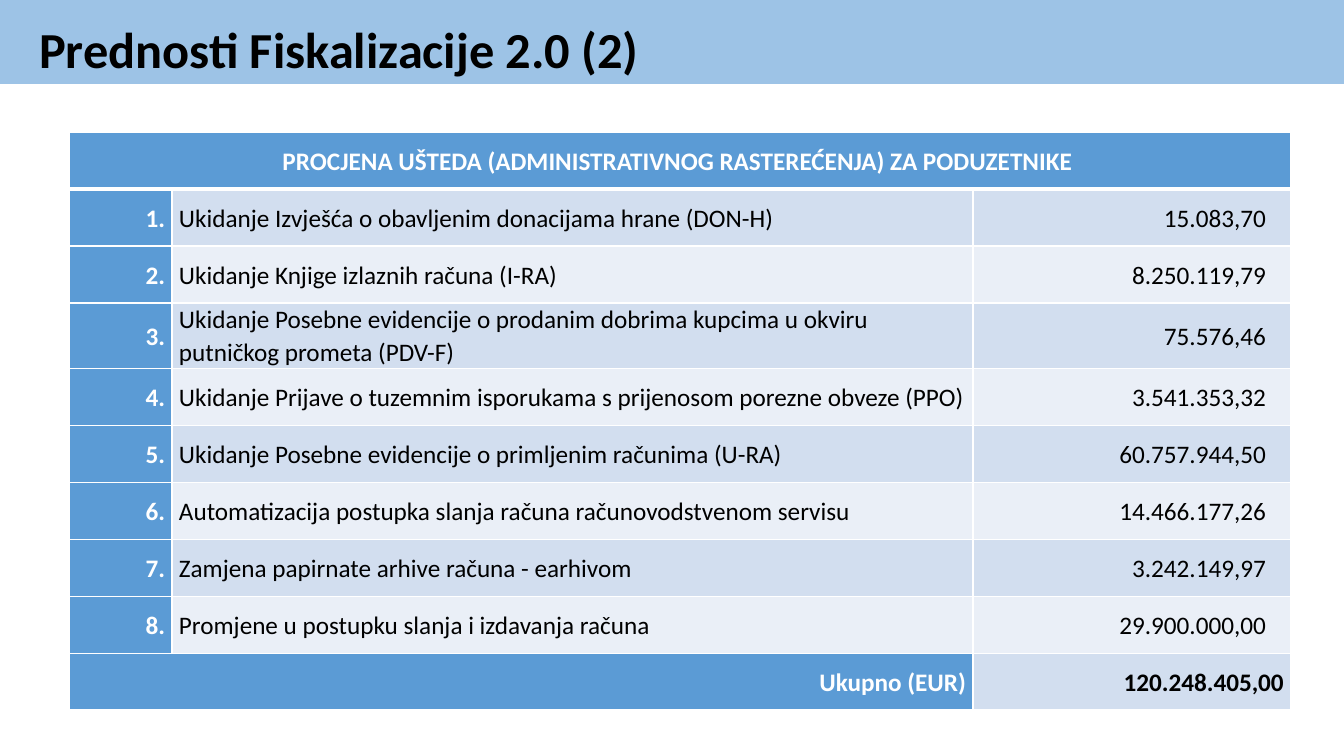
from lxml import etree
from pptx import Presentation
from pptx.dml.color import RGBColor
from pptx.enum.text import MSO_ANCHOR, MSO_AUTO_SIZE, PP_ALIGN
from pptx.oxml.ns import qn
from pptx.util import Pt

PAGE_WIDTH, PAGE_HEIGHT = 1344, 756
PX = 12192000 / PAGE_WIDTH
LEFT, CENTER, RIGHT = PP_ALIGN.LEFT, PP_ALIGN.CENTER, PP_ALIGN.RIGHT
MIDDLE, BOTTOM = MSO_ANCHOR.MIDDLE, MSO_ANCHOR.BOTTOM
NO_AUTOFIT = MSO_AUTO_SIZE.NONE

FONT = "Calibri"
BLACK, WHITE = "000000", "FFFFFF"
BANNER, ACCENT = "9DC3E6", "5B9BD5"
BANDS = ("D2DEEF", "EAEFF7")

TITLE = "Prednosti Fiskalizacije 2.0 (2)"
TABLE_HEADING = "PROCJENA UŠTEDA (ADMINISTRATIVNOG RASTEREĆENJA) ZA PODUZETNIKE"
SAVINGS = (
    ("Ukidanje Izvješća o obavljenim donacijama hrane (DON-H)", "15.083,70"),
    ("Ukidanje Knjige izlaznih računa (I-RA)", "8.250.119,79"),
    ("Ukidanje Posebne evidencije o prodanim dobrima kupcima u okviru "
     "putničkog prometa (PDV-F)", "75.576,46"),
    ("Ukidanje Prijave o tuzemnim isporukama s prijenosom porezne obveze (PPO)",
     "3.541.353,32"),
    ("Ukidanje Posebne evidencije o primljenim računima (U-RA)", "60.757.944,50"),
    ("Automatizacija postupka slanja računa računovodstvenom servisu",
     "14.466.177,26"),
    ("Zamjena papirnate arhive računa - earhivom", "3.242.149,97"),
    ("Promjene u postupku slanja i izdavanja računa", "29.900.000,00"),
)
TOTAL = ("Ukupno (EUR)", "120.248.405,00")
COLUMN_WIDTHS = (103, 801, 318)
ROW_HEIGHT = 57
CELL_INSET, AMOUNT_INSET = 7, 25


def px(length):
    return round(length * PX)


def color(hex_string):
    return RGBColor.from_string(hex_string)


def add_run(para, text, size, hex_string, bold):
    run = para.add_run()
    run.text = text
    run.font.name = FONT
    run.font.size = Pt(size)
    run.font.bold = bold
    run.font.color.rgb = color(hex_string)


def set_borders(cell, top=1, bottom=1):
    """Draw white cell borders; top and bottom are widths in points."""
    properties = cell._tc.get_or_add_tcPr()
    for tag, width in (("lnL", 1), ("lnR", 1), ("lnT", top), ("lnB", bottom)):
        line = etree.SubElement(properties, qn(f"a:{tag}"), w=str(Pt(width)))
        fill = etree.SubElement(line, qn("a:solidFill"))
        etree.SubElement(fill, qn("a:srgbClr"), val=WHITE)


def fill_cell(cell, text, align, fill, text_color, bold, right_inset=CELL_INSET):
    cell.fill.solid()
    cell.fill.fore_color.rgb = color(fill)
    cell.vertical_anchor = MIDDLE
    cell.margin_left, cell.margin_right = px(CELL_INSET), px(right_inset)
    cell.margin_top = cell.margin_bottom = 0
    para = cell.text_frame.paragraphs[0]
    para.alignment = align
    para.line_spacing = 1.06
    para.space_before = para.space_after = Pt(6)
    add_run(para, text, 18, text_color, bold)


def add_banner(page, left, top, width, height):
    title = page.shapes.title
    title.left, title.top = px(left), px(top)
    title.width, title.height = px(width), px(height)
    title.fill.solid()
    title.fill.fore_color.rgb = color(BANNER)
    frame = title.text_frame
    frame.auto_size = NO_AUTOFIT
    frame.word_wrap = True
    frame.vertical_anchor = BOTTOM
    frame.margin_left = px(39)
    para = frame.paragraphs[0]
    para.alignment = LEFT
    para.line_spacing = 0.9
    add_run(para, TITLE, 36, BLACK, True)


def add_savings_table(page, left, top):
    row_count = len(SAVINGS) + 2
    last = row_count - 1
    table = page.shapes.add_table(
        row_count, len(COLUMN_WIDTHS), px(left), px(top),
        px(sum(COLUMN_WIDTHS)), px(ROW_HEIGHT * row_count)).table
    for column, width in zip(table.columns, COLUMN_WIDTHS):
        column.width = px(width)
    for index, row in enumerate(table.rows):
        row.height = px(ROW_HEIGHT)
        for cell in row.cells:
            set_borders(cell, top=3 if index == 1 else 1,
                        bottom=3 if index == 0 else 1)

    table.cell(0, 0).merge(table.cell(0, 2))
    fill_cell(table.cell(0, 0), TABLE_HEADING, CENTER, ACCENT, WHITE, True,
              right_inset=12)
    for number, (measure, amount) in enumerate(SAVINGS, start=1):
        band = BANDS[(number - 1) % 2]
        fill_cell(table.cell(number, 0), f"{number}.", RIGHT, ACCENT, WHITE, True)
        fill_cell(table.cell(number, 1), measure, LEFT, band, BLACK, False)
        fill_cell(table.cell(number, 2), amount, RIGHT, band, BLACK, False,
                  right_inset=AMOUNT_INSET)
    table.cell(last, 0).merge(table.cell(last, 1))
    label, amount = TOTAL
    fill_cell(table.cell(last, 0), label, RIGHT, ACCENT, WHITE, True)
    fill_cell(table.cell(last, 2), amount, RIGHT, BANDS[0], BLACK, True)


def main():
    deck = Presentation()
    deck.slide_width, deck.slide_height = px(PAGE_WIDTH), px(PAGE_HEIGHT)
    page = deck.slides.add_slide(deck.slide_layouts.get_by_name("Title Only"))
    add_banner(page, 0, 0, PAGE_WIDTH, 84)
    add_savings_table(page, 69, 132)
    deck.save("out.pptx")


if __name__ == "__main__":
    main()
